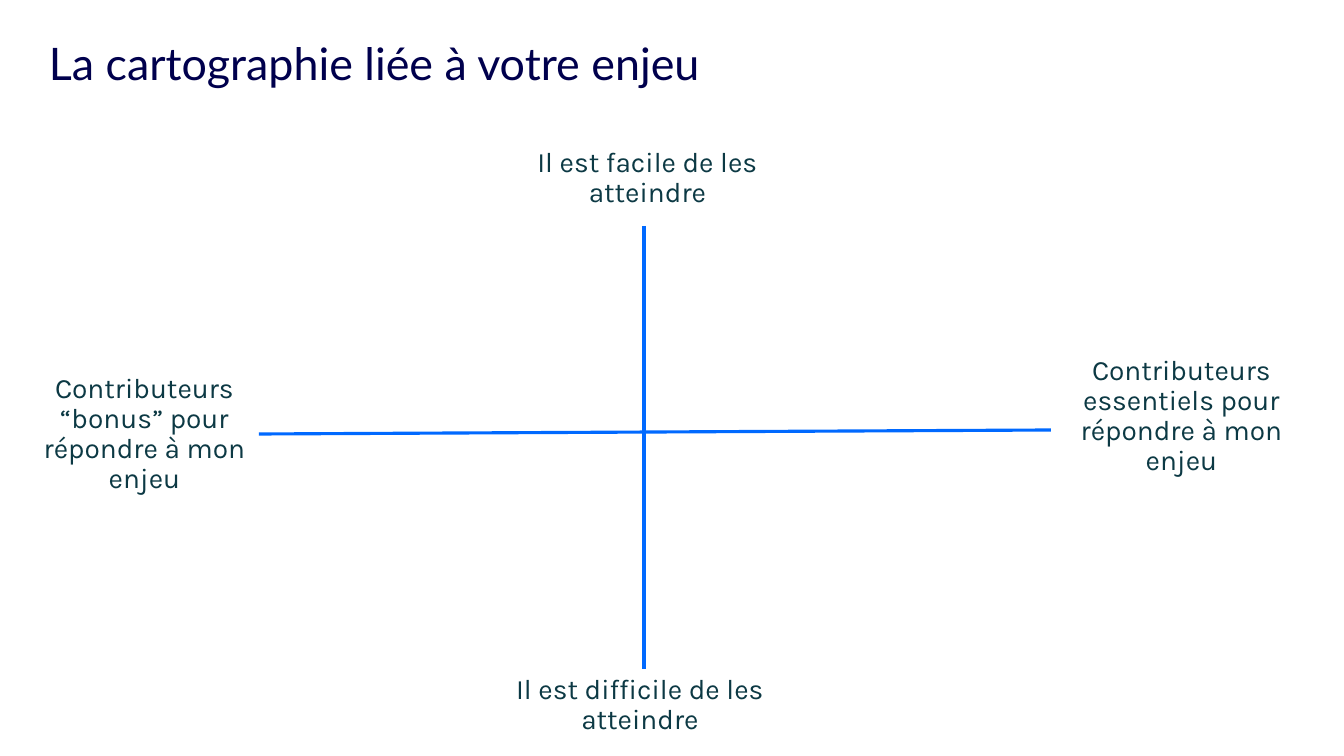
from dataclasses import dataclass

from lxml.etree import SubElement
from pptx import Presentation
from pptx.dml.color import RGBColor
from pptx.enum.shapes import MSO_CONNECTOR
from pptx.enum.text import MSO_ANCHOR, PP_ALIGN
from pptx.oxml.ns import qn
from pptx.util import Emu, Pt

SCALE = 914400 / 100.8


@dataclass(frozen=True)
class Theme:
    title: tuple = ("Lato", 32, "00004D", PP_ALIGN.LEFT)
    label: tuple = ("Karla", 20, "0C3944", PP_ALIGN.CENTER)
    axis: str = "0069FF"
    weight: float = 2.25


THEME = Theme()


def px(count):
    return Emu(round(count * SCALE))


def assign(target, values):
    for name, value in values.items():
        setattr(target, name, value)


def add_text(slide, box, words, style):
    face, size, color, align = style
    frame = slide.shapes.add_textbox(*map(px, box)).text_frame
    assign(frame, {
        "word_wrap": True, "vertical_anchor": MSO_ANCHOR.TOP,
        "margin_left": 0, "margin_right": px(10),
        "margin_top": px(5), "margin_bottom": px(5),
    })
    para = frame.paragraphs[0]
    assign(para, {"alignment": align, "line_spacing": 0.9,
                  "space_before": Pt(10.7)})
    run = para.add_run()
    run.text = words
    assign(run.font, {"name": face, "size": Pt(size)})
    run.font.color.rgb = RGBColor.from_string(color)


def add_axis(slide, start, end):
    axis = slide.shapes.add_connector(
        MSO_CONNECTOR.STRAIGHT, *map(px, start + end))
    axis.line.color.rgb = RGBColor.from_string(THEME.axis)
    axis.line.width = Pt(THEME.weight)
    SubElement(axis.element.spPr, qn("a:effectLst"))


def add_map(slide, box):
    """Draw two crossing axes with a label at each of the four ends."""
    left, top, width, height = box
    axes = (
        ((217, 291), (1009, 287)),
        ((602, 83), (602, 526)),
    )
    labels = (
        ((489, 0, 243, 86), "Il est facile de les atteindre"),
        ((474, height - 86, 258, 86), "Il est difficile de les atteindre"),
        ((width - 235, 208, 235, 116),
         "Contributeurs essentiels pour répondre à mon enjeu"),
        ((0, 226, 215, 116),
         "Contributeurs “bonus” pour répondre à mon enjeu"),
    )
    for ends in axes:
        add_axis(slide, *((left + x, top + y) for x, y in ends))
    for (x, y, wide, high), words in labels:
        add_text(slide, (left + x, top + y, wide, high), words, THEME.label)


def main():
    deck = Presentation()
    assign(deck, {"slide_width": px(1344), "slide_height": px(756)})
    slide = deck.slides.add_slide(deck.slide_layouts[6])
    add_map(slide, (42, 143, 1262, 613))
    add_text(slide, (49, 37, 1120, 116),
             "La cartographie liée à votre enjeu", THEME.title)
    deck.save("out.pptx")


if __name__ == "__main__":
    main()
